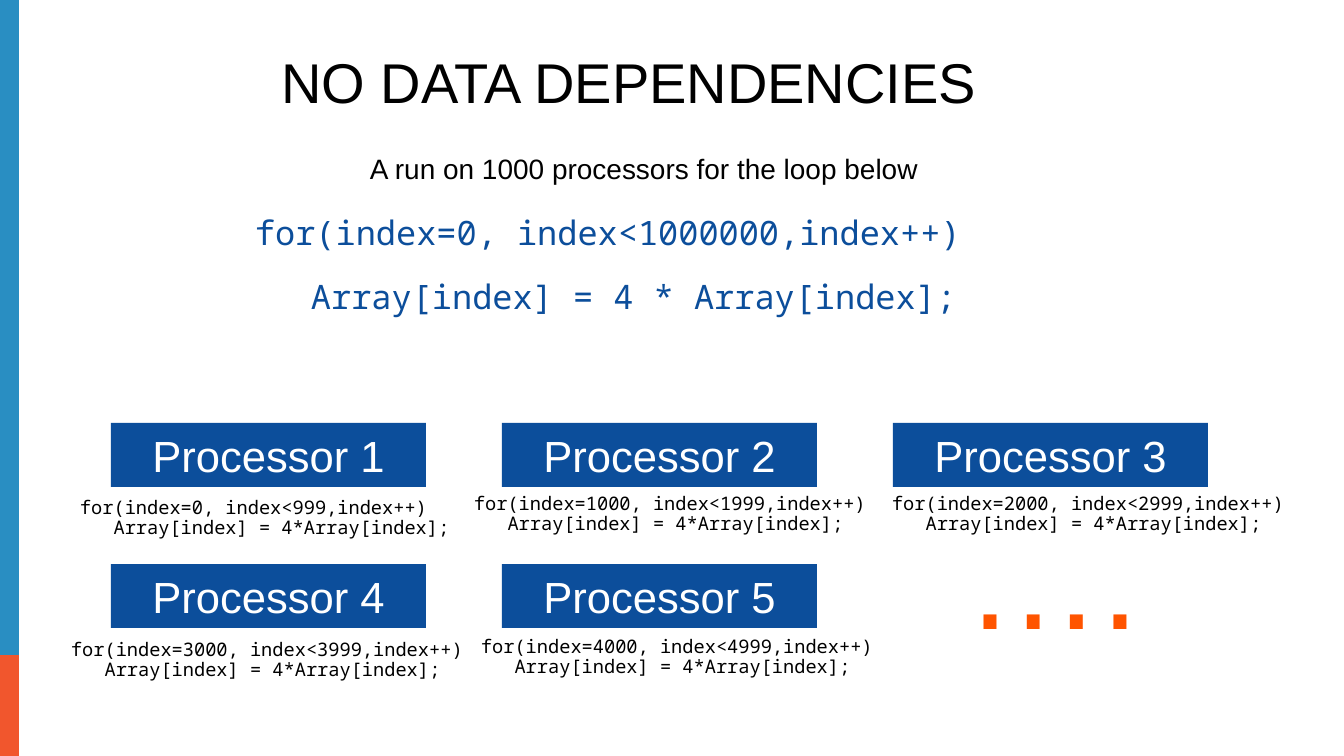
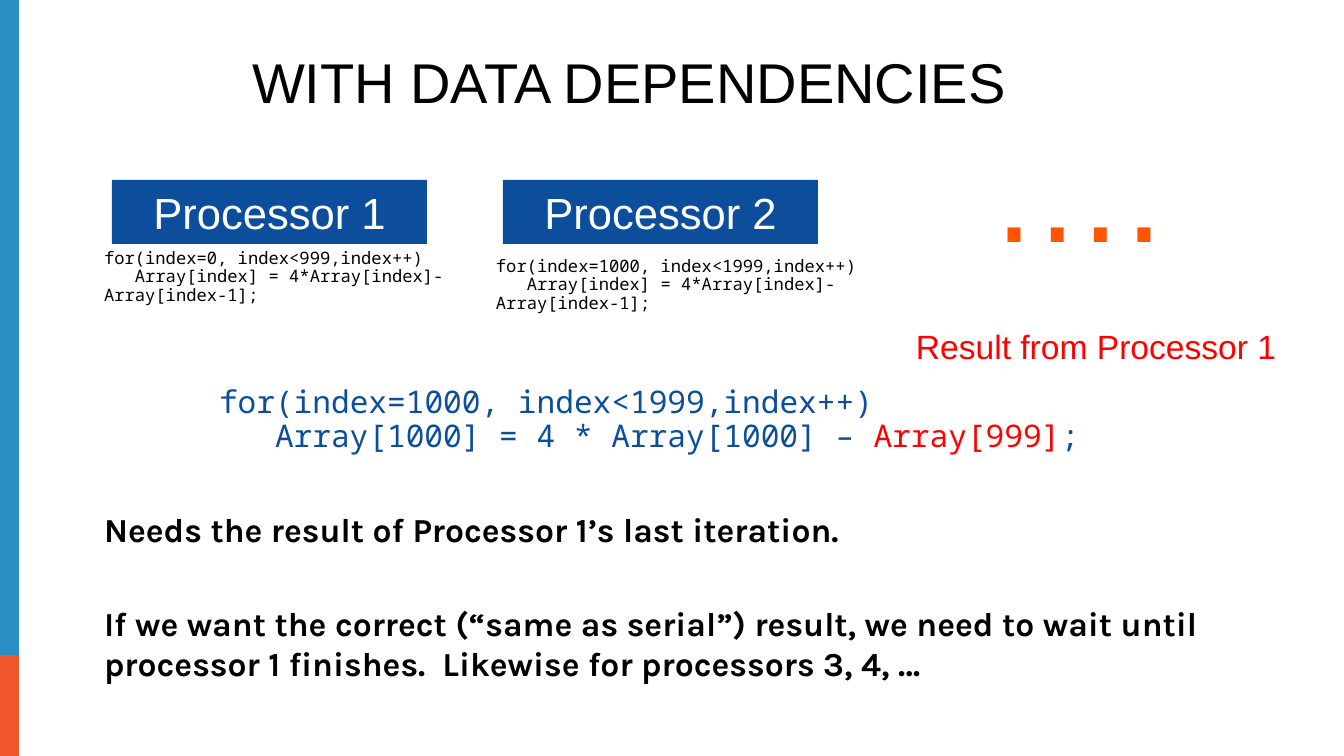
from dataclasses import dataclass

from pptx import Presentation
from pptx.dml.color import RGBColor
from pptx.enum import shapes, text
from pptx.util import Emu, Pt

PX = 914400 / 112
SLIDE_SIZE = (1344, 756)


@dataclass(frozen=True)
class Style:
    size: float
    font: str = "Arial"
    color: str = "000000"
    bold: bool = False
    align: int = text.PP_ALIGN.LEFT
    line_spacing: float = 1.0
    before: float = 0
    after: float = 0


class Theme:
    blue, white, red = "0C4E9B", "FFFFFF", "FF0000"
    mono = "Noto Sans Mono"
    center = text.PP_ALIGN.CENTER
    title = Style(36, align=center, line_spacing=0.9)
    subtitle = Style(18, align=center)
    processor = Style(28, color=white, align=center)
    loop = Style(21.6, mono, blue, line_spacing=0.9, before=9, after=9)
    example = Style(20, mono, blue, line_spacing=0.9)
    small_code = Style(12, mono, line_spacing=0.9)
    smaller_code = Style(11, mono, line_spacing=0.9)
    dots = Style(87.6, color="FF5400")
    label = Style(21.6, color=red, line_spacing=0.9)
    conclusion = Style(21.6, "Karla", bold=True, before=34.5)


BANDS = [((0, 568, 19, 188), "F1562D"), ((0, 0, 19, 655), "298EC2")]
TITLE_BOX = (65, 41, 1128, 80)
PROCESSOR_SIZE = (315, 64)
COLUMN_STEP, ROW_STEP, COLUMNS = 391, 141, 3
ITERATIONS = 1000

INDEPENDENT = {
    "title": "NO DATA DEPENDENCIES",
    "origin": (111, 423),
    "body": "Array[index] = 4*Array[index];",
    "code_style": Theme.small_code,
    "code_boxes": [
        (69, 493, 421, 83),
        (463, 489, 421, 83),
        (881, 489, 421, 83),
        (60, 635, 421, 83),
        (470, 632, 421, 83),
    ],
    "texts": [
        ((96, 146, 1096, 45), ["A run on 1000 processors for the loop below"], Theme.subtitle),
        (
            (244, 211, 857, 125),
            ["for(index=0, index<1000000,index++)", "\tArray[index] = 4 * Array[index];"],
            Theme.loop,
        ),
        ((954, 488, 261, 177), ["…."], Theme.dots),
    ],
}

DEPENDENT = {
    "title": "WITH DATA DEPENDENCIES",
    "origin": (112, 180),
    "body": "Array[index] = 4*Array[index]-Array[index-1];",
    "code_style": Theme.smaller_code,
    "code_boxes": [(93, 244, 382, 83), (485, 252, 392, 83)],
    "texts": [
        ((978, 101, 261, 177), ["…."], Theme.dots),
        ((905, 325, 386, 45), ["Result from Processor 1"], Theme.label),
        (
            (208, 381, 1051, 87),
            [
                [
                    ("for(index=1000, index<1999,index++)\v\tArray[1000] = 4 * Array[1000] – ", Theme.blue),
                    ("Array[999]", Theme.red),
                    (";", Theme.blue),
                ]
            ],
            Theme.example,
        ),
        (
            (93, 503, 1219, 168),
            [
                "Needs the result of Processor 1’s last iteration.",
                "If we want the correct (“same as serial”) result, we need to wait until "
                "processor 1 finishes.  Likewise for processors 3, 4, …",
            ],
            Theme.conclusion,
        ),
    ],
}


def to_emu(box):
    return [Emu(round(length * PX)) for length in box]


def fill_text(shape, paragraphs, style, anchor):
    frame = shape.text_frame
    frame.word_wrap = True
    frame.vertical_anchor = anchor
    for number, content in enumerate(paragraphs):
        paragraph = frame.add_paragraph() if number else frame.paragraphs[0]
        paragraph.alignment = style.align
        paragraph.line_spacing = style.line_spacing
        paragraph.space_before = Pt(style.before if number else 0)
        paragraph.space_after = Pt(style.after)
        pieces = [(content, style.color)] if isinstance(content, str) else content
        for piece, color in pieces:
            done = len(paragraph.runs)
            if done:
                paragraph.add_run().text = piece
            else:
                paragraph.text = piece
            for run in paragraph.runs[done:]:
                run.font.name = style.font
                run.font.size = Pt(style.size)
                run.font.bold = style.bold
                run.font.color.rgb = RGBColor.from_string(color)


def add_text(slide, box, paragraphs, style, anchor=text.MSO_ANCHOR.TOP):
    fill_text(slide.shapes.add_textbox(*to_emu(box)), paragraphs, style, anchor)


def add_rectangle(slide, box, color):
    shape = slide.shapes.add_shape(shapes.MSO_SHAPE.RECTANGLE, *to_emu(box))
    shape.shadow.inherit = False
    shape.fill.solid()
    shape.fill.fore_color.rgb = RGBColor.from_string(color)
    shape.line.fill.background()
    return shape


def add_processor(slide, number, content):
    row, column = divmod(number, COLUMNS)
    left, top = content["origin"]
    box = (left + column * COLUMN_STEP, top + row * ROW_STEP, *PROCESSOR_SIZE)
    start = number * ITERATIONS
    code = f"for(index={start}, index<{start + ITERATIONS - 1},index++)\v   {content['body']}"
    add_text(slide, content["code_boxes"][number], [code], content["code_style"])
    shape = add_rectangle(slide, box, Theme.blue)
    fill_text(shape, [f"Processor {number + 1}"], Theme.processor, text.MSO_ANCHOR.MIDDLE)


def build_slide(presentation, content):
    slide = presentation.slides.add_slide(presentation.slide_layouts[6])
    for box, color in BANDS:
        add_rectangle(slide, box, color)
    add_text(slide, TITLE_BOX, [content["title"]], Theme.title, text.MSO_ANCHOR.BOTTOM)
    for number in range(len(content["code_boxes"])):
        add_processor(slide, number, content)
    for box, paragraphs, style in content["texts"]:
        add_text(slide, box, paragraphs, style)


def main():
    presentation = Presentation()
    presentation.slide_width, presentation.slide_height = to_emu(SLIDE_SIZE)
    for content in (INDEPENDENT, DEPENDENT):
        build_slide(presentation, content)
    presentation.save("out.pptx")


if __name__ == "__main__":
    main()
